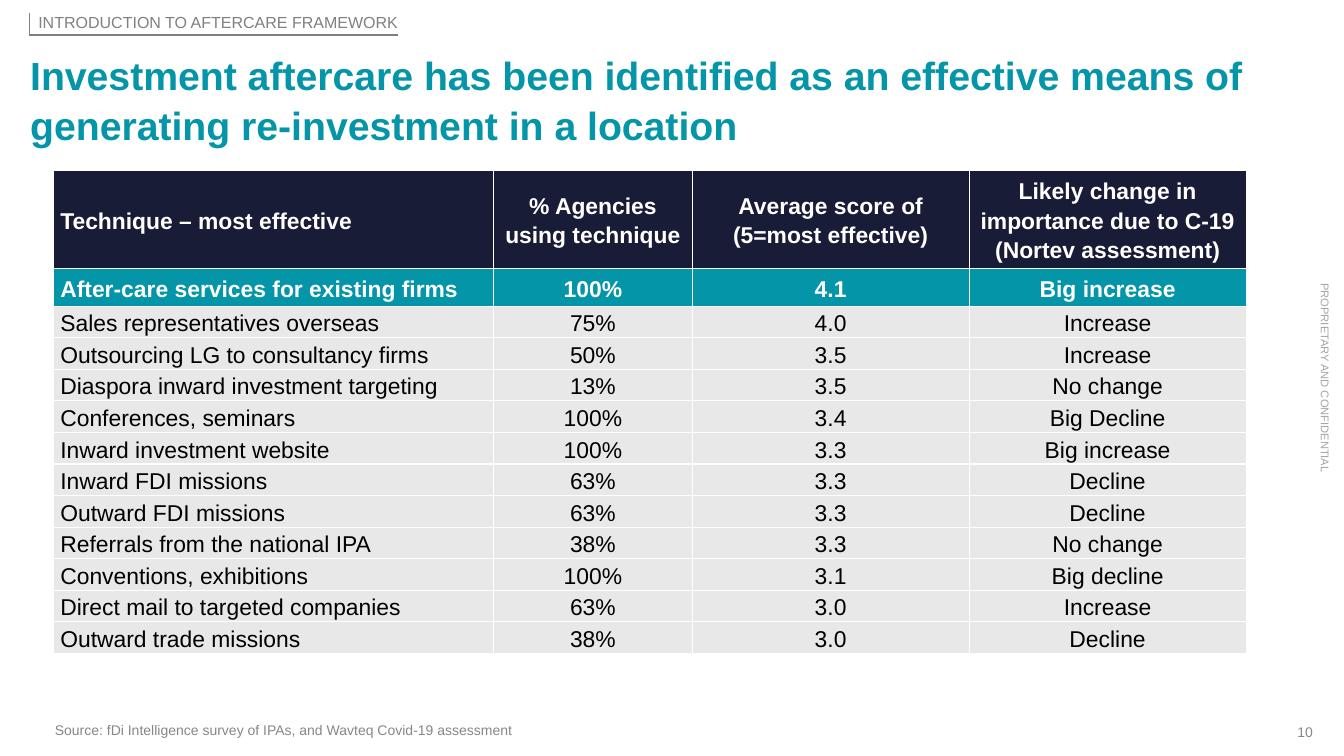
from lxml import etree
from pptx import Presentation
from pptx.dml.color import RGBColor
from pptx.enum.shapes import MSO_CONNECTOR
from pptx.enum.text import MSO_ANCHOR, PP_ALIGN
from pptx.oxml.ns import qn
from pptx.util import Inches, Pt

LEFT, CENTER, RIGHT = PP_ALIGN.LEFT, PP_ALIGN.CENTER, PP_ALIGN.RIGHT
TOP, MIDDLE, BOTTOM = MSO_ANCHOR.TOP, MSO_ANCHOR.MIDDLE, MSO_ANCHOR.BOTTOM
STRAIGHT = MSO_CONNECTOR.STRAIGHT

THEME = {
    "font": "Arial",
    "teal": "0495A8", "navy": "181C36", "band": "E8E8E8",
    "white": "FFFFFF", "black": "000000",
    "tag": "808080", "footer": "878787", "side": "A5A5A5",
    "title_size": 30.9, "table_size": 18, "tag_size": 12.6,
    "footer_size": 11, "side_size": 8.8,
}


def write_text(paragraph, text, size, color, bold=False, align=LEFT, spacing=1.0):
    paragraph.text = text
    paragraph.alignment = align
    paragraph.line_spacing = spacing
    font = paragraph.runs[0].font
    font_format = {"name": THEME["font"], "size": Pt(THEME[size]), "bold": bold}
    for attribute, value in font_format.items():
        setattr(font, attribute, value)
    font.color.rgb = RGBColor.from_string(THEME[color])


presentation = Presentation()
presentation.slide_width = Inches(14.7)
presentation.slide_height = Inches(8.27)
slide = presentation.slides.add_slide(presentation.slide_layouts[6])

# Title, section tag, source, page number and side note
TEXT_BOXES = [
    {"box": (14.06, 7.91, 0.3, 0.19), "anchor": TOP, "rotation": 0,
     "text": {"text": "10", "size": "footer_size", "color": "footer", "align": RIGHT}},
    {"box": (13.43, 4.06, 2.13, 0.15), "anchor": TOP, "rotation": 90,
     "text": {"text": "PROPRIETARY AND CONFIDENTIAL", "size": "side_size",
              "color": "side", "align": CENTER}},
    {"box": (0.33, 0.54, 14.05, 1.04), "anchor": TOP, "rotation": 0,
     "text": {"text": "Investment aftercare has been identified as an effective "
                      "means of generating re-investment in a location",
              "size": "title_size", "color": "teal", "bold": True, "spacing": 1.05}},
    {"box": (0.32, 0.14, 4.03, 0.24), "anchor": TOP, "rotation": 0,
     "text": {"text": "INTRODUCTION TO AFTERCARE FRAMEWORK", "size": "tag_size",
              "color": "tag", "align": RIGHT}},
    {"box": (0.6, 7.89, 11.59, 0.19), "anchor": BOTTOM, "rotation": 0,
     "text": {"text": "Source: fDi Intelligence survey of IPAs, and Wavteq "
                      "Covid-19 assessment",
              "size": "footer_size", "color": "footer"}},
]
for item in TEXT_BOXES:
    shape = slide.shapes.add_textbox(*map(Inches, item["box"]))
    shape.rotation = item["rotation"]
    frame = shape.text_frame
    frame_format = {"word_wrap": True, "vertical_anchor": item["anchor"],
                    "margin_left": 0, "margin_right": 0,
                    "margin_top": 0, "margin_bottom": 0}
    for attribute, value in frame_format.items():
        setattr(frame, attribute, value)
    write_text(frame.paragraphs[0], **item["text"])

# Rules below and left of the section tag
for ends, width in (((4.35, 0.38, 0.32, 0.38), 1.5), ((0.32, 0.14, 0.32, 0.38), 0.75)):
    rule = slide.shapes.add_connector(STRAIGHT, *map(Inches, ends))
    rule.line.color.rgb = RGBColor.from_string(THEME["tag"])
    rule.line.width = Pt(width)
    etree.SubElement(rule._element.spPr, qn("a:effectLst"))

# Table of techniques
ROWS = [
    ("Technique – most effective", "% Agencies using technique",
     "Average score of (5=most effective)",
     "Likely change in importance due to C-19 (Nortev assessment)"),
    ("After-care services for existing firms", "100%", "4.1", "Big increase"),
    ("Sales representatives overseas", "75%", "4.0", "Increase"),
    ("Outsourcing LG to consultancy firms", "50%", "3.5", "Increase"),
    ("Diaspora inward investment targeting", "13%", "3.5", "No change"),
    ("Conferences, seminars", "100%", "3.4", "Big Decline"),
    ("Inward investment website", "100%", "3.3", "Big increase"),
    ("Inward FDI missions", "63%", "3.3", "Decline"),
    ("Outward FDI missions", "63%", "3.3", "Decline"),
    ("Referrals from the national IPA", "38%", "3.3", "No change"),
    ("Conventions, exhibitions", "100%", "3.1", "Big decline"),
    ("Direct mail to targeted companies", "63%", "3.0", "Increase"),
    ("Outward trade missions", "38%", "3.0", "Decline"),
]
COLUMN_WIDTHS = (4.81, 2.17, 3.03, 3.03)
ROW_HEIGHTS = [1.08, 0.41] + [0.34] * (len(ROWS) - 2)
ROW_FILLS = ["navy", "teal"] + ["band"] * (len(ROWS) - 2)
CELL_FORMAT = {"vertical_anchor": MIDDLE, "margin_left": Inches(0.07),
               "margin_right": Inches(0.07), "margin_top": 0, "margin_bottom": 0}

table = slide.shapes.add_table(
    len(ROWS), len(COLUMN_WIDTHS), Inches(0.59), Inches(1.86),
    Inches(sum(COLUMN_WIDTHS)), Inches(sum(ROW_HEIGHTS))).table
table.horz_banding = False
for column, width in zip(table.columns, COLUMN_WIDTHS):
    column.width = Inches(width)

for row_index, values in enumerate(ROWS):
    table.rows[row_index].height = Inches(ROW_HEIGHTS[row_index])
    strong = row_index < 2
    for column_index, value in enumerate(values):
        cell = table.cell(row_index, column_index)
        for attribute, setting in CELL_FORMAT.items():
            setattr(cell, attribute, setting)
        # Borders go before the fill in the cell properties
        properties = cell._tc.get_or_add_tcPr()
        for side in ("lnL", "lnR", "lnT", "lnB"):
            border = etree.SubElement(properties, qn(f"a:{side}"), w=str(Pt(1)))
            border_fill = etree.SubElement(border, qn("a:solidFill"))
            etree.SubElement(border_fill, qn("a:srgbClr"), val=THEME["white"])
        cell.fill.solid()
        cell.fill.fore_color.rgb = RGBColor.from_string(THEME[ROW_FILLS[row_index]])
        write_text(cell.text_frame.paragraphs[0], value, "table_size",
                   "white" if strong else "black", bold=strong,
                   align=CENTER if column_index else LEFT, spacing=1.15)

presentation.save("out.pptx")
